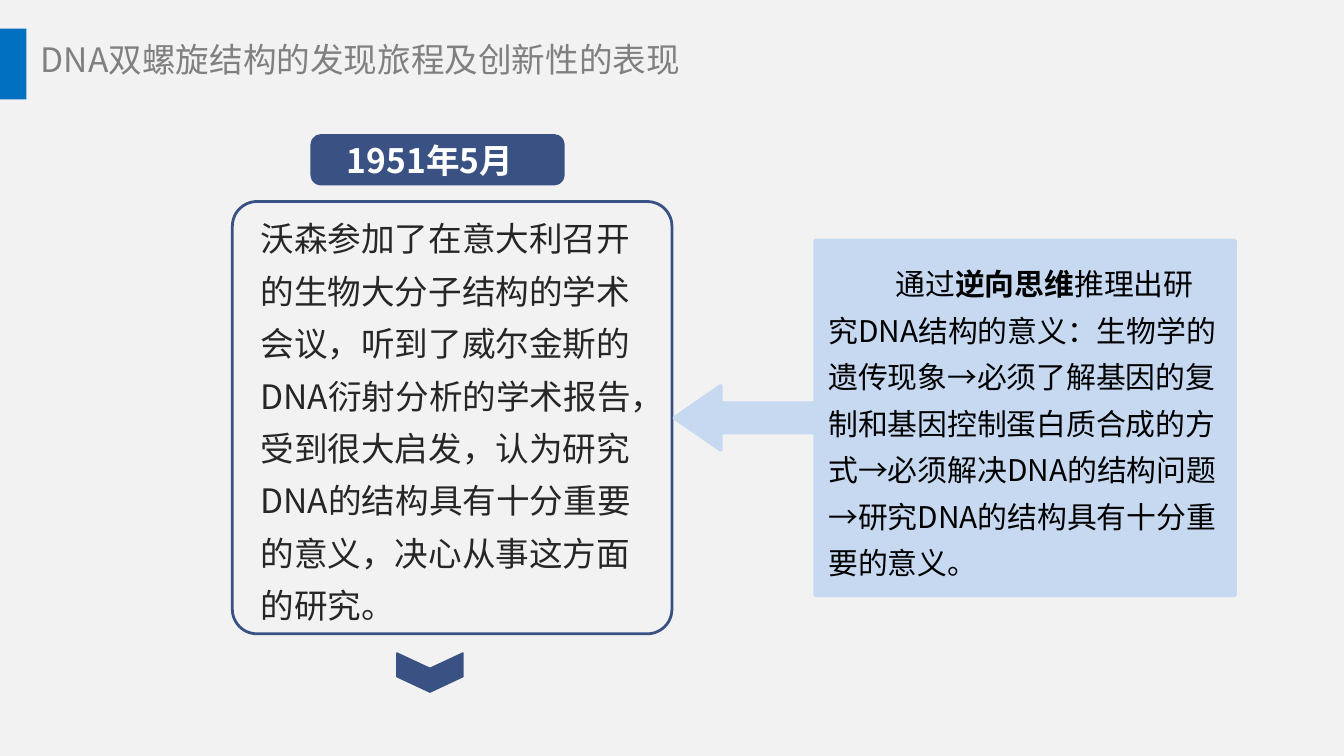
from lxml import etree
from pptx import Presentation
from pptx.dml.color import RGBColor
from pptx.enum import shapes, text
from pptx.oxml import ns
from pptx.util import Pt

FONT = "Noto Sans CJK SC"
COLORS = {
    "background": "F2F2F2", "accent": "0070C0", "navy": "3A5283",
    "callout": "C6D9F1", "title": "808080", "body": "262626",
    "white": "FFFFFF", "black": "000000",
}


def add_block(kind, box, fill=None, line=None, width=1, adjustments=()):
    block = slide.shapes.add_shape(kind, *map(Pt, box))
    block.shadow.inherit = False
    for index, value in enumerate(adjustments):
        block.adjustments[index] = value
    if fill:
        block.fill.solid()
        block.fill.fore_color.rgb = RGBColor.from_string(COLORS[fill])
    else:
        block.fill.background()
    if line:
        block.line.color.rgb = RGBColor.from_string(COLORS[line])
        block.line.width = Pt(width)
    else:
        block.line.fill.background()
    return block


def write(holder, runs, size, color, align=text.PP_ALIGN.LEFT, spacing=1.0,
          margins=(5, 2.5), wrap=True, anchor=text.MSO_ANCHOR.TOP):
    """Fill a shape with one paragraph of (wording, bold) runs."""
    frame = holder.text_frame
    frame.margin_left = frame.margin_right = Pt(margins[0])
    frame.margin_top = frame.margin_bottom = Pt(margins[1])
    frame.word_wrap = wrap
    frame.vertical_anchor = anchor
    paragraph = frame.paragraphs[0]
    paragraph.alignment = align
    paragraph.line_spacing = spacing
    for wording, bold in runs:
        run = paragraph.add_run()
        run.text = wording
        run.font.size = Pt(size)
        run.font.bold = bold
        run.font.color.rgb = RGBColor.from_string(COLORS[color])
        run.font.name = FONT
        east_asian = etree.SubElement(run.font._element, ns.qn("a:ea"))
        east_asian.set("typeface", FONT)
    return paragraph


prs = Presentation()
prs.slide_width, prs.slide_height = Pt(720), Pt(405)
slide = prs.slides.add_slide(prs.slide_layouts[5])
slide.background.fill.solid()
slide.background.fill.fore_color.rgb = RGBColor.from_string(COLORS["background"])

# Heading
add_block(shapes.MSO_SHAPE.RECTANGLE, (0, 15.3, 14.2, 38), "accent")
heading = slide.shapes.title
heading.left, heading.top, heading.width, heading.height = map(Pt, (14.4, 17.3, 366, 29.5))
write(heading, [("DNA双螺旋结构的发现旅程及创新性的表现", False)], 18, "title",
      margins=(7.5, 3.6), wrap=False)
heading.text_frame.auto_size = text.MSO_AUTO_SIZE.NONE

# Event: outlined card with its date above
add_block(shapes.MSO_SHAPE.ROUNDED_RECTANGLE, (124.5, 108, 235.5, 231.6),
          line="navy", width=1.5, adjustments=[0.057])
event = slide.shapes.add_textbox(*map(Pt, (134.6, 108, 214.6, 229)))
write(event, [("沃森参加了在意大利召开的生物大分子结构的学术会议，听到了威尔金斯的"
               "DNA衍射分析的学术报告，受到很大启发，认为研究DNA的结构具有十分重要的意义，"
               "决心从事这方面的研究。", False)], 18, "body", spacing=1.3)

add_block(shapes.MSO_SHAPE.ROUNDED_RECTANGLE, (167.8, 73.4, 133.2, 24.5),
          "navy", "navy", 3, [0.167])
date = slide.shapes.add_textbox(*map(Pt, (170.6, 72.7, 119.5, 26.6)))
write(date, [("1951年5月", True)], 18, "white", text.PP_ALIGN.CENTER)

# Chevron leading on to the next event
next_event = add_block(shapes.MSO_SHAPE.CHEVRON, (219.8, 342.6, 21, 35.4),
                       "navy", "navy", 0.75, [0.394])
next_event.rotation = 90

# Comment pointing back at the event
comment = add_block(shapes.MSO_SHAPE.LEFT_ARROW_CALLOUT, (361.4, 128.9, 300.2, 190),
                    "callout", "callout", 2, [0.083, 0.09, 0.13, 0.749])
reasoning = write(comment, [
    ("通过", False),
    ("逆向思维", True),
    ("推理出研究DNA结构的意义：生物学的遗传现象→必须了解基因的复制和基因控制蛋白质合成的方式"
     "→必须解决DNA的结构问题→研究DNA的结构具有十分重要的意义。", False),
], 16, "black", spacing=1.3, margins=(7.2, 3.6), anchor=text.MSO_ANCHOR.MIDDLE)
indent = reasoning._p.get_or_add_pPr()
indent.set("marL", "0")
indent.set("indent", str(Pt(36)))

prs.save("out.pptx")
